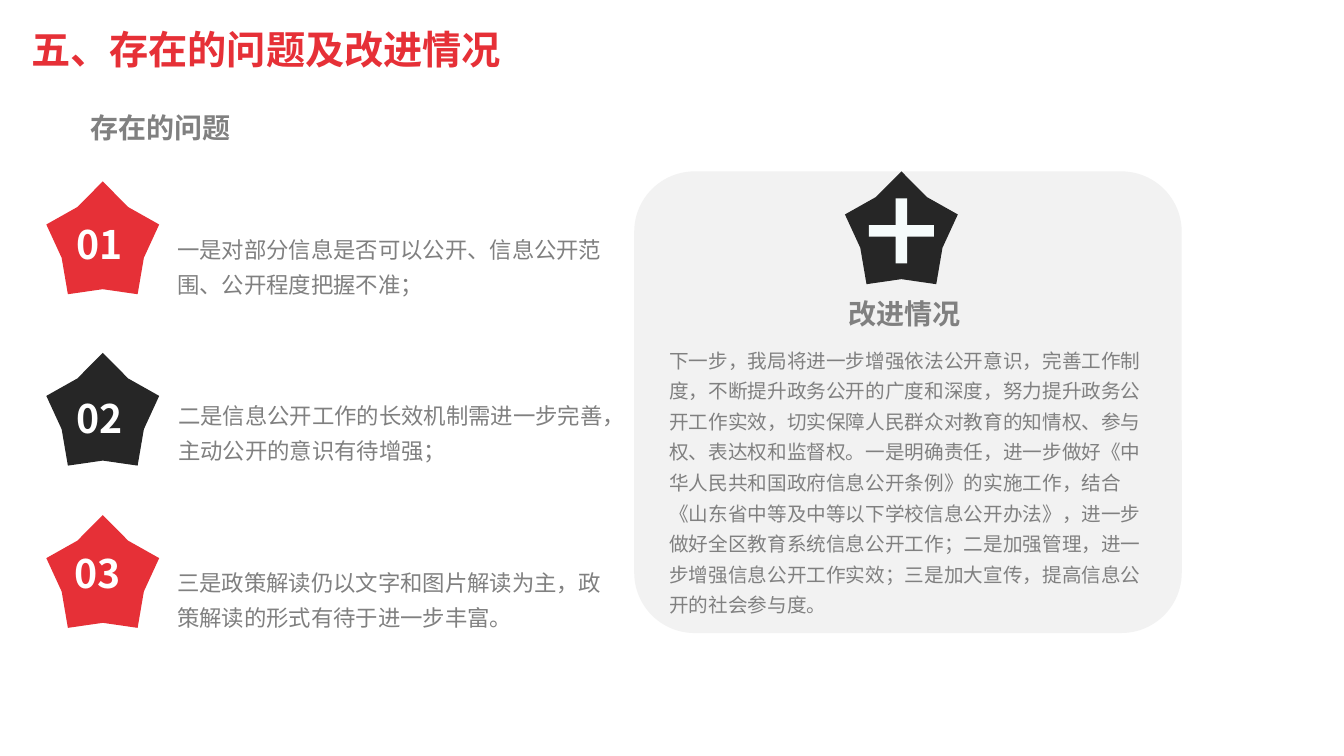
"""Build the slide on open problems and improvements."""
from pptx import Presentation
from pptx.dml.color import RGBColor
from pptx.enum.shapes import MSO_SHAPE
from pptx.enum.text import MSO_ANCHOR
from pptx.oxml.ns import qn
from pptx.util import Inches, Pt
from lxml import etree

STAR = MSO_SHAPE.STAR_5_POINT
PLUS = MSO_SHAPE.MATH_PLUS
ROUND = MSO_SHAPE.ROUNDED_RECTANGLE
MIDDLE = MSO_ANCHOR.MIDDLE

WIDE, HIGH = Inches(13.33), Inches(7.5)
SANS = "Noto Sans CJK SC"
RED, DARK, GREY, WHITE = "E63037", "262626", "808080", "FFFFFF"

ISSUES = [
    ("01", RED, 24, (4.95, 28.53), (12.45, 29.47),
     "一是对部分信息是否可以公开、信息公开范围、公开程度把握不准；"),
    ("02", DARK, 46.67, (4.95, 51.47), (12.53, 51.47),
     "二是信息公开工作的长效机制需进一步完善，主动公开的意识有待增强；"),
    ("03", RED, 68.13, (4.8, 72), (12.45, 73.6),
     "三是政策解读仍以文字和图片解读为主，政策解读的形式有待于进一步丰富。"),
]
PLAN = (
    "下一步，我局将进一步增强依法公开意识，完善工作制度，不断提升政务公开的广度和深度，"
    "努力提升政务公开工作实效，切实保障人民群众对教育的知情权、参与权、表达权和监督权。"
    "一是明确责任，进一步做好《中华人民共和国政府信息公开条例》的实施工作，"
    "结合《山东省中等及中等以下学校信息公开办法》，进一步做好全区教育系统信息公开工作；"
    "二是加强管理，进一步增强信息公开工作实效；三是加大宣传，提高信息公开的社会参与度。"
)


def color(code):
    """Turn a hex string into a colour."""
    return RGBColor.from_string(code)


def place(x, y, w, h):
    """Turn percent shares of the slide into lengths."""
    return [round(part * side / 100)
            for part, side in zip((x, y, w, h), (WIDE, HIGH, WIDE, HIGH))]


def shape(slide, kind, box, fill, bend):
    """Add a plain filled shape with its first adjustment."""
    item = slide.shapes.add_shape(kind, *place(*box))
    item.adjustments[0] = bend
    item.shadow.inherit = False
    item.fill.solid()
    item.fill.fore_color.rgb = color(fill)
    item.line.fill.background()


def star(slide, x, y, fill):
    """Add one of the equal broad stars."""
    shape(slide, STAR, (x, y, 8.4, 14.93), fill, 0.364)


def label(slide, box, text, size, tint=GREY, bold=False, wrap=True,
          space=1.0, face=SANS):
    """Add a text box with one formatted paragraph."""
    frame = slide.shapes.add_textbox(*place(*box)).text_frame
    frame.word_wrap = wrap
    frame.text = text
    line = frame.paragraphs[0]
    line.line_spacing = space
    run = line.runs[0]
    run.font.size = Pt(size)
    run.font.bold = bold
    run.font.color.rgb = color(tint)
    run.font.name = face
    east = etree.SubElement(run.font._element, qn("a:ea"))
    east.set("typeface", SANS)
    return frame


def issue(slide, mark, fill, top, spot, start, text):
    """Add a numbered star with its problem text."""
    star(slide, 3.45, top, fill)
    label(slide, (*spot, 5.63, 7.6), mark, 28, WHITE, bold=True)
    label(slide, (*start, 34.13, 10.67), text, 16, space=1.3)


def panel(slide):
    """Add the card with the improvement plan."""
    shape(slide, ROUND, (47.19, 22.67, 40.74, 61.07), "F2F2F2", 0.131)
    label(slide, (62.42, 38.53, 9.83, 5.87), "改进情况", 20,
          bold=True, wrap=False)
    label(slide, (49.06, 44.53, 37.58, 38), PLAN, 14, space=1.3)
    star(slide, 62.87, 22.67, DARK)
    shape(slide, PLUS, (63.77, 24.67, 6.6, 11.73), "F5FBFB", 0.13)


def main():
    """Build and save the slide."""
    deck = Presentation()
    deck.slide_width, deck.slide_height = WIDE, HIGH
    slide = deck.slides.add_slide(deck.slide_layouts[6])
    title = label(slide, (1.58, 2.67, 86.27, 8.27), "五、存在的问题及改进情况",
                  28, RED, bold=True, space=0.9, face="Montserrat")
    title.vertical_anchor = MIDDLE
    label(slide, (6, 14, 11.93, 5.87), "存在的问题", 20,
          bold=True, wrap=False)
    panel(slide)
    for row in ISSUES:
        issue(slide, *row)
    deck.save("out.pptx")


if __name__ == "__main__":
    main()
